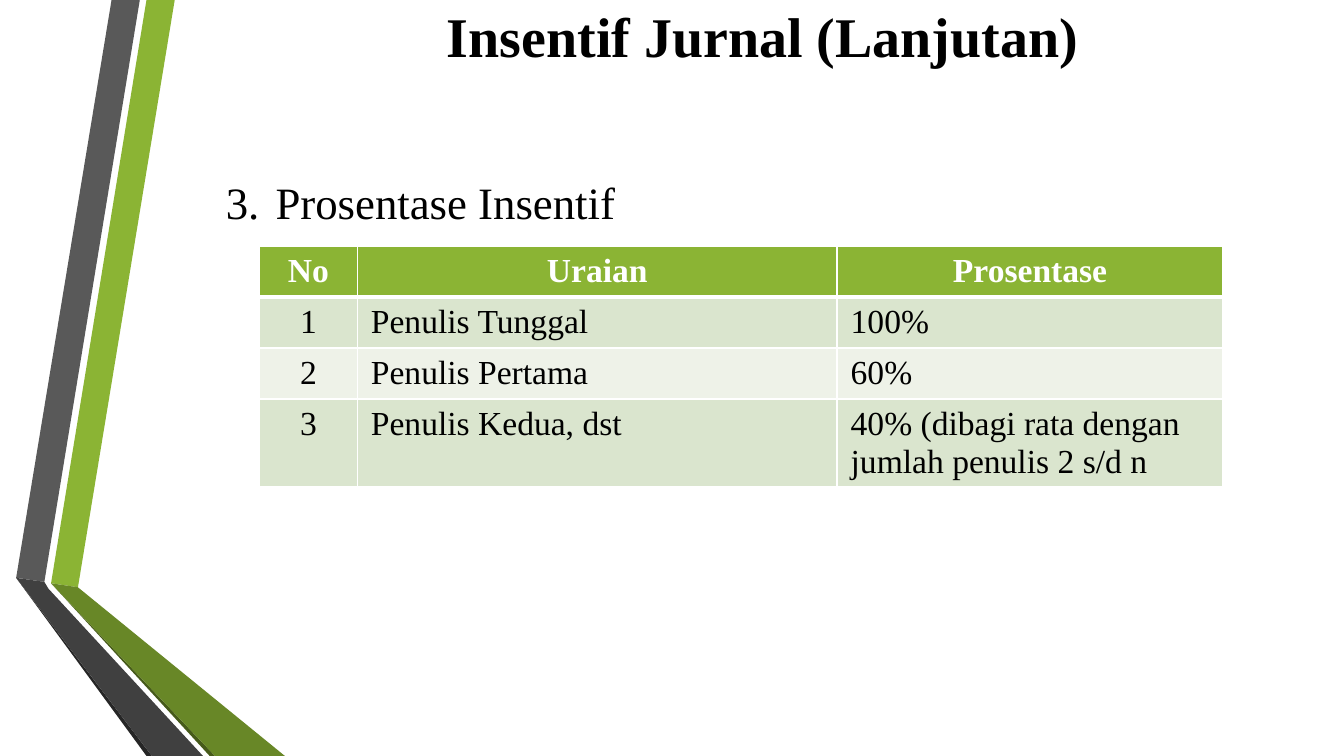
"""Build the journal incentive slide with its percentage table."""
from lxml.etree import SubElement
from pptx import Presentation
from pptx.dml.color import RGBColor
from pptx.enum.text import MSO_ANCHOR as Anchor, MSO_AUTO_SIZE as AutoSize, PP_ALIGN as Align
from pptx.oxml.ns import qn
from pptx.util import Inches, Pt

FONT = "Times New Roman"
BLACK = RGBColor(0x00, 0x00, 0x00)
WHITE = RGBColor(0xFF, 0xFF, 0xFF)
GREEN = RGBColor(0x8B, 0xB4, 0x34)
OLIVE = RGBColor(0x68, 0x87, 0x27)
DARK_OLIVE = RGBColor(0x46, 0x5A, 0x1A)
GRAY = RGBColor(0x59, 0x59, 0x59)
CHARCOAL = RGBColor(0x40, 0x40, 0x40)
NEAR_BLACK = RGBColor(0x26, 0x26, 0x26)
BAND_DARK = RGBColor(0xDA, 0xE5, 0xCE)
BAND_LIGHT = RGBColor(0xEE, 0xF2, 0xE8)
WIDTH = 10
HEIGHT = WIDTH * 9 / 16


def format_text(para, size, color, bold=False, align=Align.LEFT):
    para.alignment = align
    for span in para.runs:
        span.font.name = FONT
        span.font.size = Pt(size)
        span.font.bold = bold
        span.font.color.rgb = color


def add_border(cell, side, width):
    line = SubElement(cell._tc.get_or_add_tcPr(), qn(f"a:{side}"), w=str(Pt(width)))
    fill = SubElement(line, qn("a:solidFill"))
    SubElement(fill, qn("a:srgbClr"), val=str(WHITE))


deck = Presentation()
deck.slide_width, deck.slide_height = Inches(WIDTH), Inches(HEIGHT)
page = deck.slides.add_slide(deck.slide_layouts[1])

ribbons = [
    (GREEN, [(0.38, 4.34), (0.58, 4.37), (1.3, 0), (1.09, 0)]),
    (GRAY, [(1.04, 0), (0.83, 0), (0.12, 4.3), (0.33, 4.33)]),
    (NEAR_BLACK, [(0.12, 4.3), (1.09, HEIGHT), (1.13, HEIGHT)]),
    (DARK_OLIVE, [(0.38, 4.34), (1.56, HEIGHT), (1.6, HEIGHT)]),
    (OLIVE, [(0.38, 4.34), (1.6, HEIGHT), (2.12, HEIGHT), (0.58, 4.37)]),
    (CHARCOAL, [(1.51, HEIGHT), (0.36, 4.38), (0.33, 4.33), (0.12, 4.3), (1.13, HEIGHT)]),
]
for color, points in ribbons:
    corners = [(Inches(x), Inches(y)) for x, y in points]
    builder = page.shapes.build_freeform(*corners[0])
    builder.add_line_segments(corners[1:], close=True)
    ribbon = builder.convert_to_shape()
    ribbon.shadow.inherit = False
    ribbon.fill.solid()
    ribbon.fill.fore_color.rgb = color
    ribbon.line.fill.background()

title = page.shapes.title
title.left, title.top, title.width, title.height = map(Inches, (2.01, -0.07, 7.33, 0.63))
title.text_frame.text = "Insentif Jurnal (Lanjutan)"
title.text_frame.auto_size = AutoSize.NONE
title.text_frame.vertical_anchor = Anchor.BOTTOM
format_text(title.text_frame.paragraphs[0], 30, BLACK, True, Align.CENTER)

body = page.placeholders[1]
body.left, body.top, body.width, body.height = map(Inches, (1.58, 1.25, 8.19, 3.07))
body.text_frame.text = "3.\tProsentase Insentif"
body.text_frame.auto_size = AutoSize.NONE
body.text_frame.vertical_anchor = Anchor.TOP
heading = body.text_frame.paragraphs[0]
format_text(heading, 24, BLACK)
heading.space_before, heading.space_after = Pt(4.8), Pt(4.5)
properties = heading._p.get_or_add_pPr()
properties.set("marL", str(Inches(0.37)))
properties.set("indent", str(-Inches(0.37)))
SubElement(properties, qn("a:buNone"))

rows = [
    ("No", "Uraian", "Prosentase"),
    ("1", "Penulis Tunggal", "100%"),
    ("2", "Penulis Pertama", "60%"),
    ("3", "Penulis Kedua, dst", "40% (dibagi rata dengan jumlah penulis 2 s/d n"),
]
column_widths = (0.73, 3.57, 2.87)
row_heights = (0.38, 0.38, 0.38, 0.65)
frame = page.shapes.add_table(
    len(rows), len(column_widths), Inches(1.93), Inches(1.83),
    Inches(sum(column_widths)), Inches(sum(row_heights)),
)
table = frame.table
for column, width in zip(table.columns, column_widths):
    column.width = Inches(width)
for row_index, (texts, height) in enumerate(zip(rows, row_heights)):
    table.rows[row_index].height = Inches(height)
    header = row_index == 0
    band = GREEN if header else BAND_DARK if row_index % 2 else BAND_LIGHT
    for column_index, text in enumerate(texts):
        cell = table.cell(row_index, column_index)
        cell.text_frame.text = text
        align = Align.CENTER if header or column_index == 0 else Align.LEFT
        format_text(cell.text_frame.paragraphs[0], 18, WHITE if header else BLACK, header, align)
        for side in ("lnL", "lnR", "lnT", "lnB"):
            thick = (header and side == "lnB") or (row_index == 1 and side == "lnT")
            add_border(cell, side, 3 if thick else 1)
        cell.fill.solid()
        cell.fill.fore_color.rgb = band

deck.save("out.pptx")
